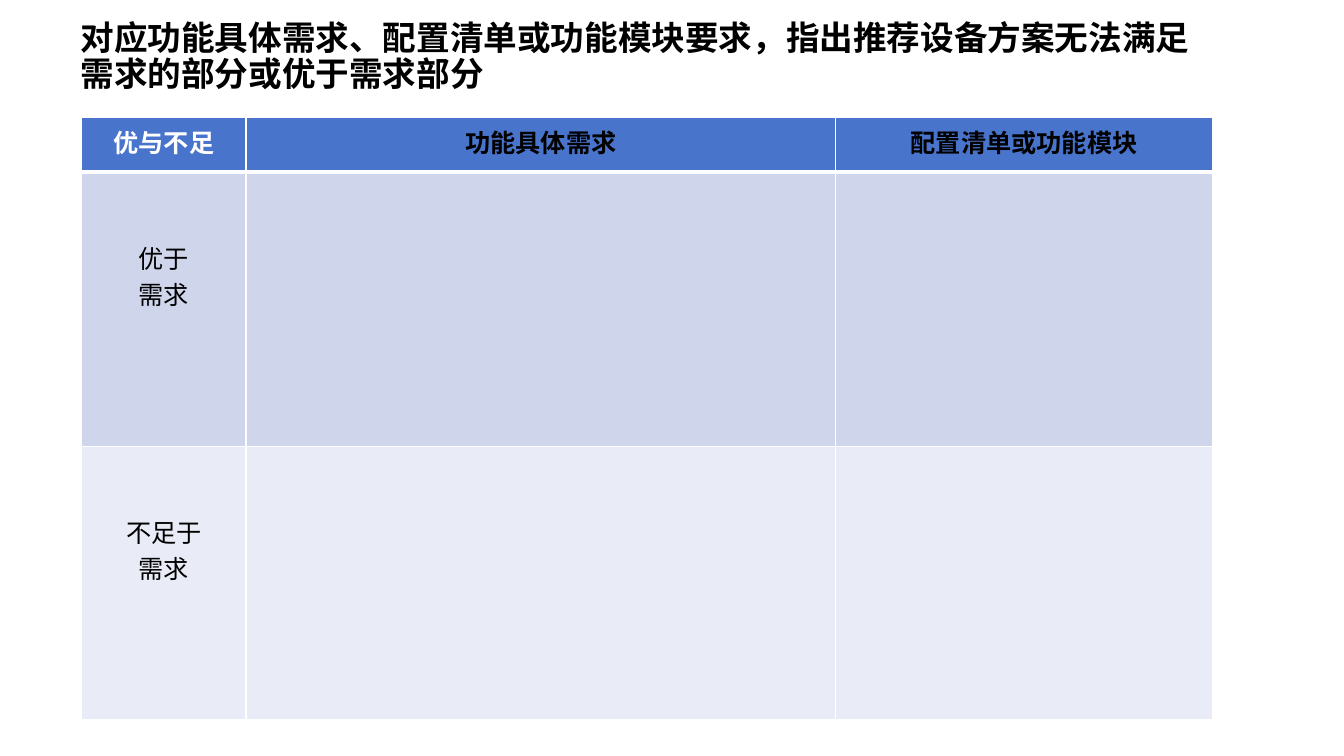
import pptx
import pptx.dml.color
import pptx.enum.text
import pptx.oxml
import pptx.oxml.ns
import pptx.util

Cm = pptx.util.Cm
Pt = pptx.util.Pt
RGBColor = pptx.dml.color.RGBColor

BLACK = RGBColor(0x00, 0x00, 0x00)
WHITE = RGBColor(0xFF, 0xFF, 0xFF)
HEADER_BLUE = RGBColor(0x48, 0x74, 0xCB)
BAND_DARK = RGBColor(0xCF, 0xD6, 0xEC)
BAND_LIGHT = RGBColor(0xE9, 0xEB, 0xF6)


class PageBuilder:
    latin_font = "Calibri"
    chinese_font = "Noto Sans CJK SC"

    def __init__(self, page):
        self.page = page

    def fill_para(self, para, text, color, font_format, para_format):
        for name, value in para_format.items():
            setattr(para, name, value)
        span = para.add_run()
        span.text = text
        span.font.color.rgb = color
        for name, value in font_format.items():
            setattr(span.font, name, value)
        east_asian = pptx.oxml.parse_xml(
            f'<a:ea {pptx.oxml.ns.nsdecls("a")} typeface="{self.chinese_font}"/>')
        span.font._element.find(pptx.oxml.ns.qn("a:latin")).addnext(east_asian)

    def title(self, text, left, top, width, height):
        box = self.page.shapes.add_textbox(left, top, width, height)
        frame = box.text_frame
        frame.word_wrap = True
        frame.auto_size = pptx.enum.text.MSO_AUTO_SIZE.TEXT_TO_FIT_SHAPE
        self.fill_para(frame.paragraphs[0], text, BLACK,
                       {"size": Pt(24), "bold": True, "name": self.chinese_font},
                       {"line_spacing": 0.9, "space_before": Pt(10)})

    def table(self, left, top, widths, heights):
        frame = self.page.shapes.add_table(
            len(heights), len(widths), left, top, sum(widths), sum(heights))
        for column, width in zip(frame.table.columns, widths):
            column.width = width
        for row, height in zip(frame.table.rows, heights):
            row.height = height
        return frame.table

    def cell(self, cell, lines, fill, color, font_format, margin_top, borders):
        cell.fill.solid()
        cell.fill.fore_color.rgb = fill
        cell.margin_top = margin_top
        self.borders(cell, *borders)
        frame = cell.text_frame
        for index, line in enumerate(lines):
            para = frame.add_paragraph() if index else frame.paragraphs[0]
            self.fill_para(para, line, color, font_format,
                           {"alignment": pptx.enum.text.PP_ALIGN.CENTER})

    def borders(self, cell, top_points, bottom_points):
        properties = cell._tc.get_or_add_tcPr()
        points = {"lnL": 1, "lnR": 1, "lnT": top_points, "lnB": bottom_points}
        for index, (side, width) in enumerate(points.items()):
            properties.insert(index, pptx.oxml.parse_xml(
                f'<a:{side} {pptx.oxml.ns.nsdecls("a")} w="{Pt(width)}">'
                f'<a:solidFill><a:srgbClr val="{WHITE}"/></a:solidFill></a:{side}>'))


def main():
    deck = pptx.Presentation()
    deck.slide_width, deck.slide_height = Cm(33.87), Cm(19.05)
    builder = PageBuilder(deck.slides.add_slide(deck.slide_layouts[6]))

    # Title
    builder.title("对应功能具体需求、配置清单或功能模块要求，指出推荐设备方案无法满足需求的部分或优于需求部分",
                  Cm(1.78), Cm(0.41), Cm(29.26), Cm(2.54))

    # Comparison table
    table = builder.table(Cm(2.06), Cm(2.97),
                          [Cm(4.14), Cm(14.86), Cm(9.5)],
                          [Cm(1.37), Cm(6.91), Cm(6.88)])

    # Header row, closed by a thick rule
    headings = [("优与不足", builder.latin_font, WHITE),
                ("功能具体需求", builder.chinese_font, BLACK),
                ("配置清单或功能模块", builder.chinese_font, BLACK)]
    for column, (heading, font, color) in enumerate(headings):
        builder.cell(table.cell(0, column), [heading], HEADER_BLUE, color,
                     {"size": Pt(18), "bold": True, "name": font},
                     Cm(0.13), (1, 3))

    # Body rows, with blank cells to fill in
    body_font = {"size": Pt(18), "bold": False, "name": builder.latin_font}
    body_rows = [(["优于", "需求"], BAND_DARK, (3, 1)),
                 (["不足于", "需求"], BAND_LIGHT, (1, 1))]
    for row, (label, fill, borders) in enumerate(body_rows, start=1):
        for column in range(len(headings)):
            builder.cell(table.cell(row, column), [] if column else label, fill, BLACK,
                         body_font, Cm(0.13) if column else Cm(1.68), borders)

    deck.save("out.pptx")


if __name__ == "__main__":
    main()
